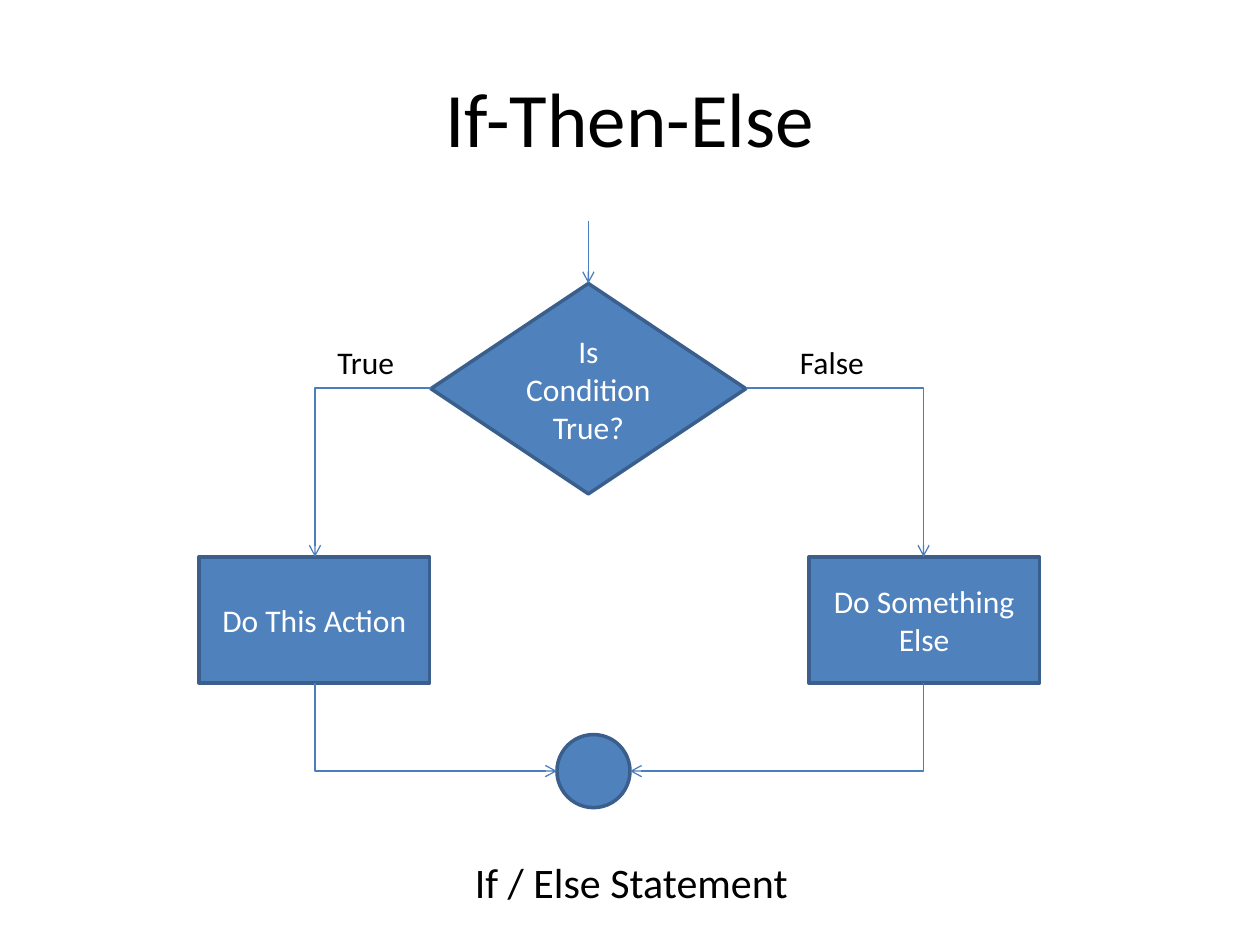
from lxml import etree
from pptx import Presentation
from pptx.dml.color import RGBColor
from pptx.enum.shapes import MSO_CONNECTOR, MSO_SHAPE
from pptx.enum.text import MSO_ANCHOR, MSO_AUTO_SIZE, PP_ALIGN
from pptx.oxml.ns import qn
from pptx.util import Inches, Pt

BLUE = RGBColor(0x4F, 0x81, 0xBD)
EDGE = RGBColor(0x3A, 0x5F, 0x8C)
LINK = RGBColor(0x4B, 0x7E, 0xBC)
BLACK = RGBColor(0, 0, 0)
WHITE = RGBColor(0xFF, 0xFF, 0xFF)
CENTER, MIDDLE = PP_ALIGN.CENTER, MSO_ANCHOR.MIDDLE
FIT = MSO_AUTO_SIZE.SHAPE_TO_FIT_TEXT
STRAIGHT, ELBOW = MSO_CONNECTOR.STRAIGHT, MSO_CONNECTOR.ELBOW
CHOICE = MSO_SHAPE.FLOWCHART_DECISION
ACTION = MSO_SHAPE.FLOWCHART_PROCESS
JOIN = MSO_SHAPE.FLOWCHART_CONNECTOR


def write(frame, text, size, color):
    run = frame.paragraphs[0].add_run()
    run.text = text
    run.font.name = "Calibri"
    run.font.size = Pt(size)
    run.font.color.rgb = color


def arrow(kind, x1, y1, x2, y2, turn=0):
    if turn:
        midx, midy = (x1 + x2) / 2, (y1 + y2) / 2
        halfx, halfy = abs(y2 - y1) / 2, abs(x2 - x1) / 2
        side = -1 if turn == 270 else 1
        x1, x2 = midx - side * halfx, midx + side * halfx
        y1, y2 = midy - halfy, midy + halfy
    line = slide.shapes.add_connector(
        kind, Inches(x1), Inches(y1), Inches(x2), Inches(y2))
    line.line.color.rgb = LINK
    line.line.width = Pt(0.75)
    props = line._element.spPr
    if kind == ELBOW:
        props.find(qn("a:prstGeom")).set("prst", "bentConnector2")
    if turn:
        props.find(qn("a:xfrm")).set("rot", str(turn * 60000))
    tail = etree.SubElement(props.find(qn("a:ln")), qn("a:tailEnd"))
    tail.set("type", "arrow")
    etree.SubElement(props, qn("a:effectLst"))


deck = Presentation()
deck.slide_width, deck.slide_height = Inches(10), Inches(7.5)
slide = deck.slides.add_slide(deck.slide_layouts[5])

title = slide.shapes.title
title.left, title.top = Inches(0.5), Inches(0.3)
title.width, title.height = Inches(9), Inches(1.25)
title.text_frame.vertical_anchor = MIDDLE
write(title.text_frame, "If-Then-Else", 44, BLACK)
title.text_frame.paragraphs[0].alignment = CENTER

nodes = [
    (CHOICE, 3.42, 2.25, 2.5, 1.67, "Is Condition True?"),
    (ACTION, 1.58, 4.42, 1.83, 1, "Do This Action"),
    (ACTION, 6.42, 4.42, 1.83, 1, "Do Something Else"),
    (JOIN, 4.42, 5.83, 0.58, 0.58, ""),
]
for kind, x, y, wide, high, text in nodes:
    node = slide.shapes.add_shape(
        kind, Inches(x), Inches(y), Inches(wide), Inches(high))
    node.shadow.inherit = False
    node.fill.solid()
    node.fill.fore_color.rgb = BLUE
    node.line.color.rgb = EDGE
    node.line.width = Pt(2)
    if text:
        node.text_frame.vertical_anchor = MIDDLE
        node.text_frame.paragraphs[0].alignment = CENTER
        write(node.text_frame, text, 18, WHITE)

arrow(STRAIGHT, 4.67, 1.75, 4.67, 2.25)
for edge, mid, rim, turn in [(3.42, 2.5, 4.42, 270), (5.92, 7.33, 5, 90)]:
    arrow(ELBOW, edge, 3.08, mid, 4.42)
    arrow(ELBOW, mid, 5.42, rim, 6.12, turn)

labels = [
    (2.58, 2.67, 0.66, 0.4, "True", 18),
    (6.25, 2.67, 0.71, 0.4, "False", 18),
    (3.67, 6.75, 2.71, 0.5, "If / Else Statement", 24),
]
for x, y, wide, high, text, size in labels:
    label = slide.shapes.add_textbox(
        Inches(x), Inches(y), Inches(wide), Inches(high))
    label.text_frame.word_wrap = False
    label.text_frame.auto_size = FIT
    write(label.text_frame, text, size, BLACK)

deck.save("out.pptx")
